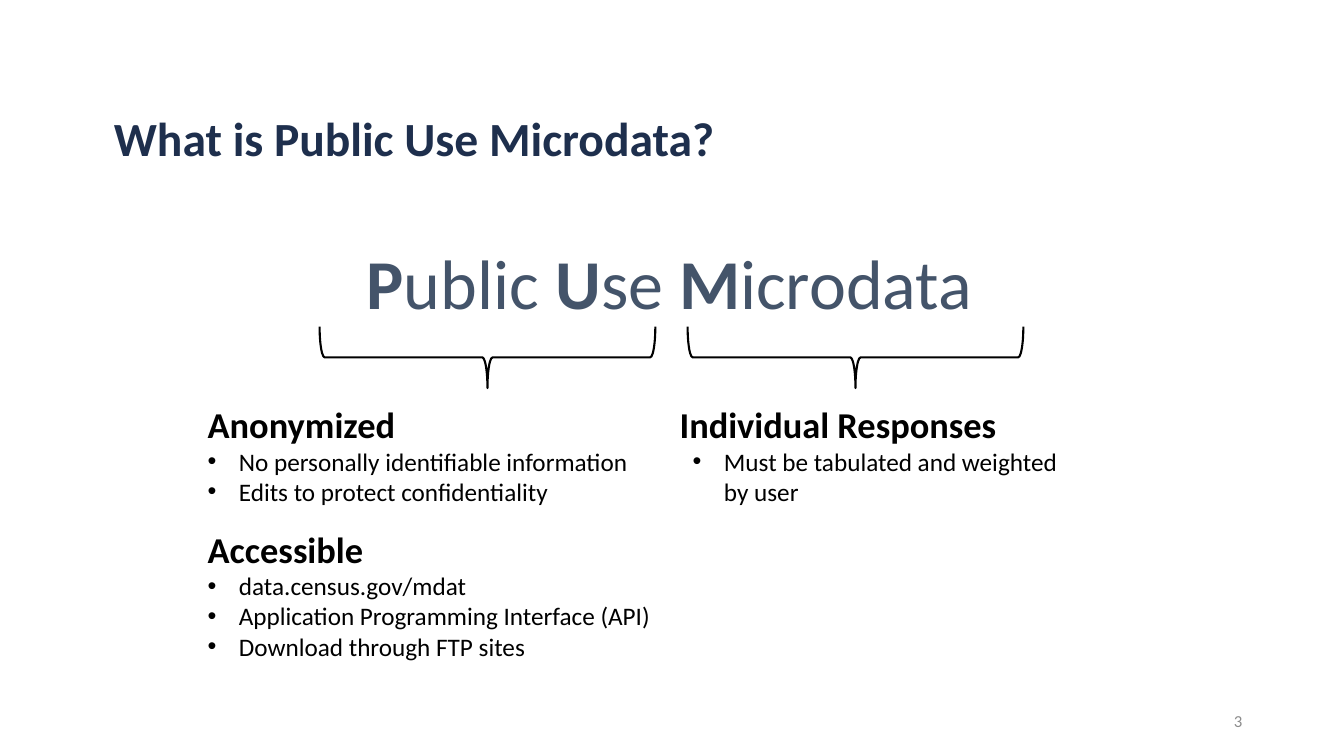
from lxml.etree import SubElement
from pptx import Presentation
from pptx.dml.color import RGBColor
from pptx.enum.shapes import MSO_SHAPE
from pptx.enum.text import MSO_ANCHOR, MSO_AUTO_SIZE, PP_ALIGN
from pptx.oxml.ns import qn
from pptx.util import Inches, Pt

FONT = "Calibri"
COLORS = {
    "title": "1E2F4D",
    "headline": "44546A",
    "text": "000000",
    "page": "8C8C8C",
}
HANGING = 0.31

ANONYMIZED = ("Anonymized", [
    "No personally identifiable information",
    "Edits to protect confidentiality",
])
ACCESSIBLE = ("Accessible", [
    "data.census.gov/mdat",
    "Application Programming Interface (API)",
    "Download through FTP sites",
])
RESPONSES = ("Individual Responses", ["Must be tabulated and weighted by user"])


def place(shape, left, top, width, height):
    shape.left, shape.top = Inches(left), Inches(top)
    shape.width, shape.height = Inches(width), Inches(height)


def style_run(run, size, color, bold=False):
    run.font.name = FONT
    run.font.size = Pt(size)
    run.font.bold = bold
    run.font.color.rgb = RGBColor.from_string(COLORS[color])


def set_bullet(paragraph, char=None, indent=0):
    properties = paragraph._p.get_or_add_pPr()
    properties.set("marL", str(Inches(indent)))
    properties.set("indent", str(-Inches(HANGING) if char else 0))
    if char:
        SubElement(properties, qn("a:buFont"), typeface="Arial")
        SubElement(properties, qn("a:buChar"), char=char)
    else:
        SubElement(properties, qn("a:buNone"))


def add_title(slide, text):
    title = slide.shapes.title
    place(title, 1.03, 0.61, 11.23, 1.09)
    frame = title.text_frame
    frame.text = text
    frame.auto_size = MSO_AUTO_SIZE.NONE
    frame.vertical_anchor = MSO_ANCHOR.BOTTOM
    paragraph = frame.paragraphs[0]
    paragraph.alignment = PP_ALIGN.LEFT
    paragraph.line_spacing = 0.9
    style_run(paragraph.runs[0], 34, "title", bold=True)


def add_text_box(slide, box, alignment):
    text_box = slide.shapes.add_textbox(*map(Inches, box))
    text_box.text_frame.word_wrap = True
    paragraph = text_box.text_frame.paragraphs[0]
    paragraph.alignment = alignment
    return text_box.text_frame, paragraph


def add_headline(slide, words):
    _, paragraph = add_text_box(slide, (2.15, 2.33, 8.98, 0.91), PP_ALIGN.CENTER)
    for position, word in enumerate(words):
        gap = " " if position else ""
        for text, bold in ((gap + word[0], True), (word[1:], False)):
            run = paragraph.add_run()
            run.text = text
            style_run(run, 50, "headline", bold)


def add_brace(slide, left):
    brace = slide.shapes.add_shape(
        MSO_SHAPE.LEFT_BRACE, Inches(left), Inches(1.88), Inches(0.61), Inches(3.33))
    brace.rotation = 270
    brace.shadow.inherit = False
    brace.fill.background()
    brace.line.color.rgb = RGBColor.from_string(COLORS["text"])
    brace.line.width = Pt(1.5)


def fill_list(placeholder, box, sections, indent=HANGING):
    place(placeholder, *box)
    frame = placeholder.text_frame
    lines = [(text, text == heading)
             for heading, items in sections for text in (heading, *items)]
    frame.text = "\n".join(text for text, _ in lines)
    frame.auto_size = MSO_AUTO_SIZE.SHAPE_TO_FIT_TEXT
    for position, (paragraph, (_, is_heading)) in enumerate(zip(frame.paragraphs, lines)):
        if is_heading:
            set_bullet(paragraph)
        else:
            set_bullet(paragraph, "•", indent)
        # A gap separates each later section from the one above
        paragraph.space_before = Pt(14.6 if is_heading and position else 0)
        style_run(paragraph.runs[0], 26 if is_heading else 18, "text", is_heading)


def add_page_number(slide, number):
    frame, paragraph = add_text_box(slide, (9.42, 6.95, 3, 0.4), PP_ALIGN.RIGHT)
    frame.vertical_anchor = MSO_ANCHOR.MIDDLE
    paragraph.text = number
    style_run(paragraph.runs[0], 12, "page")


def main():
    presentation = Presentation()
    presentation.slide_width = Inches(13.33)
    presentation.slide_height = Inches(7.5)
    two_content = presentation.slide_layouts[3]
    slide = presentation.slides.add_slide(two_content)

    # Title and headline
    add_title(slide, "What is Public Use Microdata?")
    add_headline(slide, ["Public", "Use", "Microdata"])

    # Braces from the headline to the two lists
    for left in (4.53, 8.18):
        add_brace(slide, left)

    # Lists
    fill_list(slide.placeholders[1], (1.96, 3.94, 4.65, 2.69), [ANONYMIZED, ACCESSIBLE])
    fill_list(slide.placeholders[2], (6.64, 3.94, 3.95, 1.14), [RESPONSES], indent=0.44)

    # Page number
    add_page_number(slide, "3")

    presentation.save("out.pptx")


if __name__ == "__main__":
    main()
